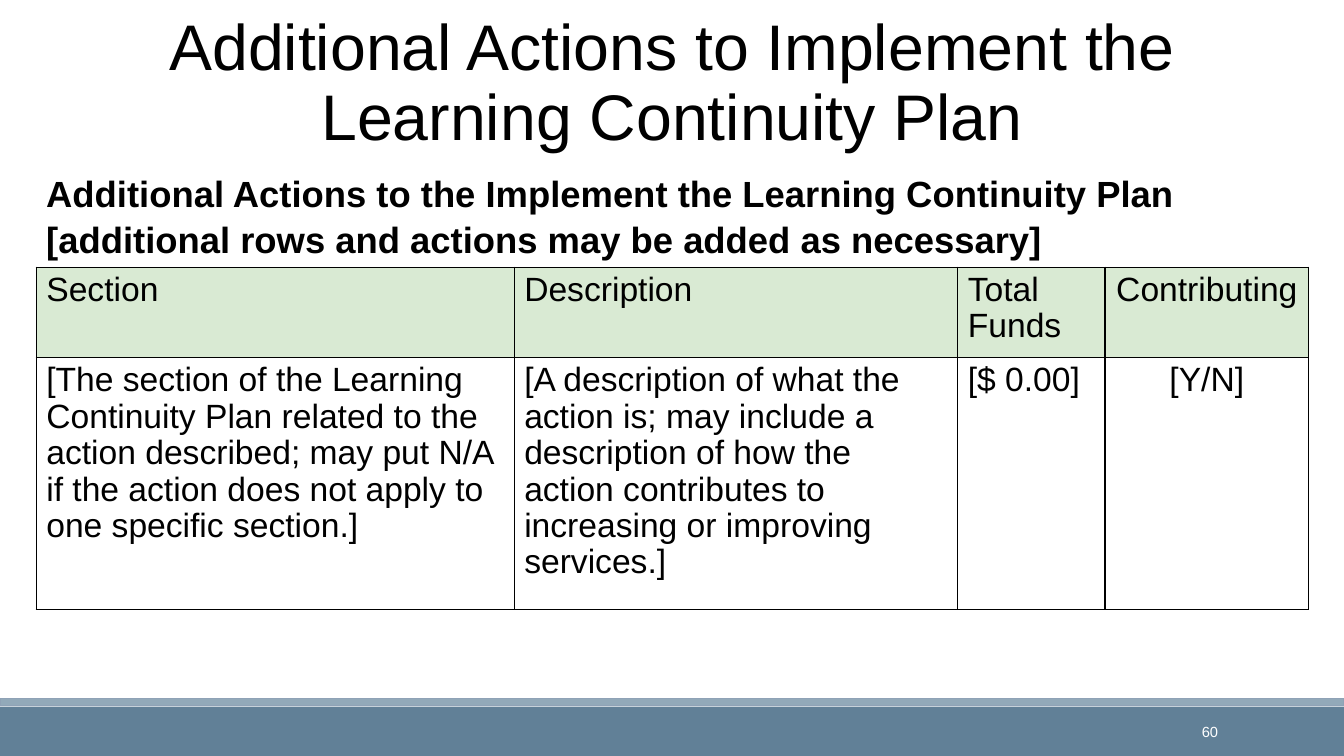
import pptx
import pptx.util
import pptx.dml.color
import pptx.enum.shapes
import pptx.enum.text
import lxml.etree

Inches = pptx.util.Inches
Pt = pptx.util.Pt
RGBColor = pptx.dml.color.RGBColor
Align = pptx.enum.text.PP_ALIGN
Anchor = pptx.enum.text.MSO_ANCHOR

BLACK = RGBColor(0x00, 0x00, 0x00)
WHITE = RGBColor(0xFF, 0xFF, 0xFF)
GREEN = RGBColor(0xD9, 0xEA, 0xD3)
SLATE = RGBColor(0x61, 0x80, 0x97)
MIST = RGBColor(0x92, 0xA9, 0xB9)
EDGE = RGBColor(0x8F, 0xA2, 0xB6)

COLS = [4.74, 4.4, 1.46, 2.02]
ROWS = [0.9, 2.5]
CELLS = [
    ["Section", "Description", "Total Funds", "Contributing"],
    [
        "[The section of the Learning Continuity Plan related to the action "
        "described; may put N/A if the action does not apply to one specific section.]",
        "[A description of what the action is; may include a description of how "
        "the action contributes to increasing or improving services.]",
        "[$ 0.00]",
        "[Y/N]",
    ],
]


def style_text(frame, text, size, color=BLACK, bold=False, align=Align.LEFT, space=None):
    """Fill a text frame with one styled paragraph."""
    frame.text = text
    para = frame.paragraphs[0]
    para.alignment = align
    para.line_spacing = space
    font = para.runs[0].font
    font.name = "Arial"
    font.size = Pt(size)
    font.bold = bold
    font.color.rgb = color


def add_band(slide, top, height, fill, edge=None):
    """Draw a full-width footer band."""
    kind = pptx.enum.shapes.MSO_SHAPE.RECTANGLE
    band = slide.shapes.add_shape(kind, 0, Inches(top), Inches(13.33), Inches(height))
    band.shadow.inherit = False
    band.fill.solid()
    band.fill.fore_color.rgb = fill
    if edge is None:
        band.line.fill.background()
    else:
        band.line.color.rgb = edge
        band.line.width = Pt(1.25)


def add_label(slide, place, text, size, anchor=Anchor.TOP, **look):
    """Add a wrapped text box."""
    box = slide.shapes.add_textbox(*map(Inches, place))
    frame = box.text_frame
    frame.word_wrap = True
    frame.vertical_anchor = anchor
    style_text(frame, text, size, **look)


def add_title(slide, text):
    """Place the slide title in its placeholder."""
    title = slide.shapes.title
    title.left, title.top = Inches(0.41), Inches(0.31)
    title.width, title.height = Inches(12.51), Inches(1.27)
    title.text_frame.vertical_anchor = Anchor.BOTTOM
    style_text(title.text_frame, text, 46, align=Align.CENTER, space=0.9)


def add_border(cell):
    """Give a cell thin black lines on all four sides."""
    props = cell._tc.get_or_add_tcPr()
    for spot, side in enumerate(("lnL", "lnR", "lnT", "lnB")):
        line = pptx.oxml.parse_xml(
            f'<a:{side} xmlns:a="http://schemas.openxmlformats.org/drawingml/2006/main" '
            f'w="12700"><a:solidFill><a:srgbClr val="{BLACK}"/></a:solidFill></a:{side}>'
        )
        props.insert(spot, line)


def add_grid(slide):
    """Add the table of actions."""
    place = map(Inches, (0.36, 2.65, sum(COLS), sum(ROWS)))
    table = slide.shapes.add_table(len(ROWS), len(COLS), *place).table
    for col, width in zip(table.columns, COLS):
        col.width = Inches(width)
    for row, height, texts in zip(table.rows, ROWS, CELLS):
        row.height = Inches(height)
        for cell, text in zip(row.cells, texts):
            last = text == texts[-1]
            style_text(cell.text_frame, text, 24, align=Align.CENTER if last else Align.LEFT,
                       space=0.97)
            if texts is CELLS[0]:
                cell.fill.solid()
                cell.fill.fore_color.rgb = GREEN
            else:
                cell.fill.background()
            add_border(cell)


def main():
    """Build the slide and save it."""
    deck = pptx.Presentation()
    deck.slide_width, deck.slide_height = Inches(13.33), Inches(7.5)
    slide = deck.slides.add_slide(deck.slide_layouts[6])
    add_band(slide, 7.01, 0.49, SLATE)
    add_band(slide, 6.93, 0.07, MIST, EDGE)
    add_label(slide, (0.41, 0.31, 12.51, 1.27),
              "Additional Actions to Implement the Learning Continuity Plan",
              46, Anchor.BOTTOM, align=Align.CENTER, space=0.9)
    add_label(slide, (0.36, 1.63, 12.78, 0.98),
              "Additional Actions to the Implement the Learning Continuity Plan "
              "[additional rows and actions may be added as necessary]",
              26, bold=True, space=1.05)
    add_grid(slide)
    add_label(slide, (10.75, 7.06, 1.43, 0.4), "60", 10.5, Anchor.MIDDLE,
              color=WHITE, align=Align.RIGHT)
    deck.save("out.pptx")


if __name__ == "__main__":
    main()
